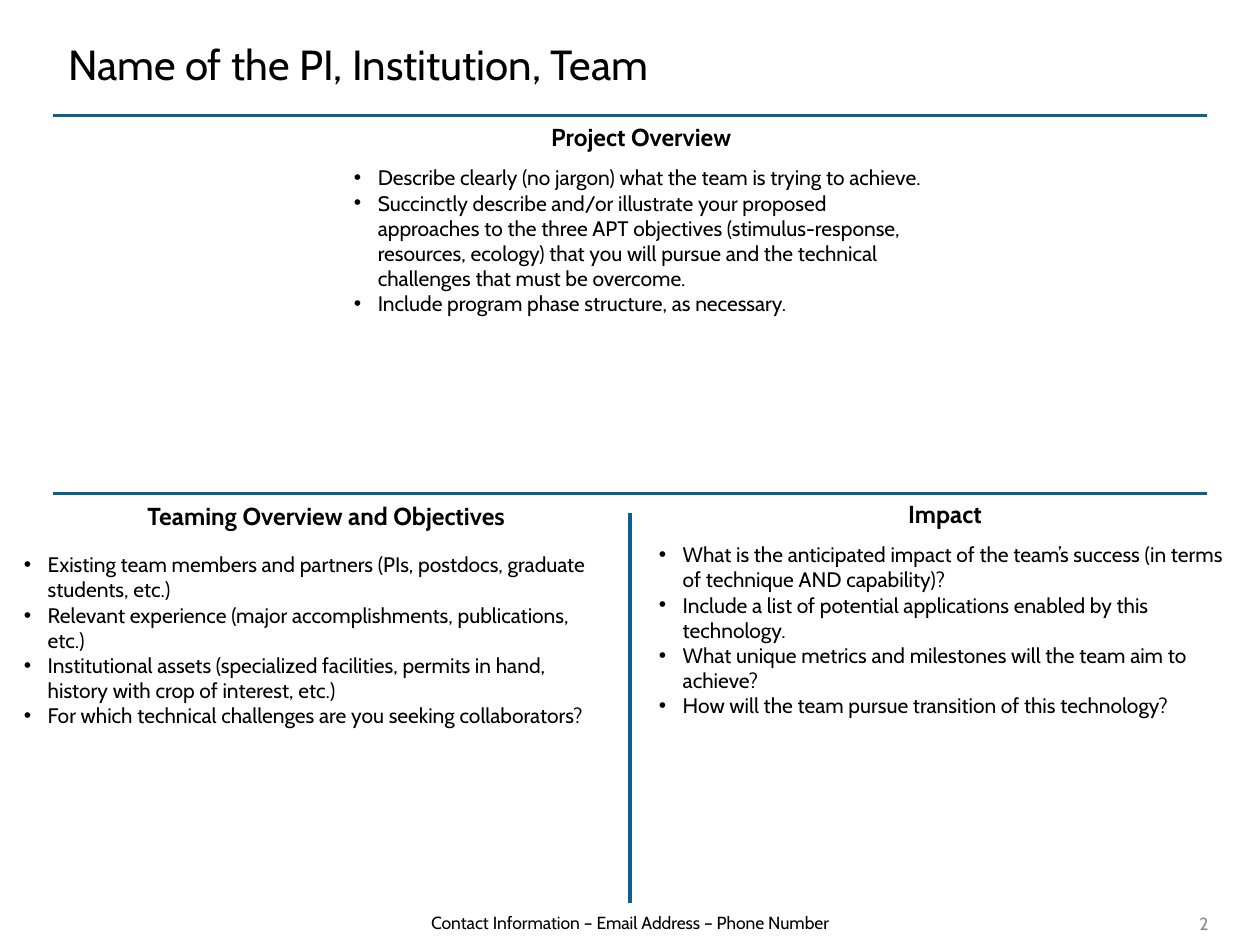
"""Build a project summary slide with an overview, teaming and impact panels."""
from dataclasses import dataclass

from lxml.etree import SubElement
from pptx import Presentation
from pptx.dml.color import RGBColor
from pptx.enum.shapes import MSO_CONNECTOR
from pptx.enum.text import MSO_ANCHOR, MSO_AUTO_SIZE, PP_ALIGN
from pptx.oxml.ns import qn
from pptx.slide import Slide
from pptx.text.text import TextFrame
from pptx.util import Inches, Pt

FONT = "Cabin"
BLACK, GRAY, BLUE = "000000", "898989", "0F5E90"
INDENT = Inches(0.19)


@dataclass
class Box:
    left: float
    top: float
    width: float
    height: float


@dataclass
class Style:
    size: int
    color: str = BLACK
    bold: bool = False
    align: PP_ALIGN = PP_ALIGN.LEFT
    anchor: MSO_ANCHOR = MSO_ANCHOR.TOP
    bullet: bool = False


@dataclass
class Panel:
    title: str
    head: Box
    body: Box
    items: list[str]


@dataclass
class Rule:
    left: float
    top: float
    right: float
    bottom: float


TITLE = Style(24, anchor=MSO_ANCHOR.MIDDLE)
HEAD = Style(14, bold=True, align=PP_ALIGN.CENTER)
BODY = Style(12, bullet=True)
FOOTER = Style(10, align=PP_ALIGN.CENTER, anchor=MSO_ANCHOR.MIDDLE)
NUMBER = Style(10, GRAY, align=PP_ALIGN.RIGHT, anchor=MSO_ANCHOR.MIDDLE)

RULES = [
    Rule(0.42, 0.92, 9.58, 0.92),
    Rule(0.42, 3.92, 9.58, 3.92),
    Rule(5, 4.07, 5, 7.17),
]

PANELS = [
    Panel("Project Overview", Box(2.59, 0.92, 5, 0.34), Box(2.71, 1.26, 4.75, 1.51), [
        "Describe clearly (no jargon) what the team is trying to achieve.",
        "Succinctly describe and/or illustrate your proposed approaches to the three "
        "APT objectives (stimulus-response, resources, ecology) that you will pursue "
        "and the technical challenges that must be overcome.",
        "Include program phase structure, as necessary.",
    ]),
    Panel("Teaming Overview and Objectives", Box(0.57, 3.93, 4.04, 0.34),
          Box(0.09, 4.33, 4.75, 1.72), [
        "Existing team members and partners (PIs, postdocs, graduate students, etc.)",
        "Relevant experience (major accomplishments, publications, etc.)",
        "Institutional assets (specialized facilities, permits in hand, history with "
        "crop of interest, etc.)",
        "For which technical challenges are you seeking collaborators?",
    ]),
    Panel("Impact", Box(5, 3.91, 5, 0.34), Box(5.13, 4.25, 4.75, 1.51), [
        "What is the anticipated impact of the team’s success (in terms of technique "
        "AND capability)?",
        "Include a list of potential applications enabled by this technology.",
        "What unique metrics and milestones will the team aim to achieve?",
        "How will the team pursue transition of this technology?",
    ]),
]


def rgb(code: str) -> RGBColor:
    return RGBColor.from_string(code)


def place(box: Box) -> tuple:
    return tuple(Inches(n) for n in (box.left, box.top, box.width, box.height))


def fill_text(frame: TextFrame, lines: list[str], style: Style) -> None:
    frame.word_wrap = True
    frame.auto_size = MSO_AUTO_SIZE.NONE
    frame.vertical_anchor = style.anchor
    frame.text = "\n".join(lines)
    for para in frame.paragraphs:
        para.alignment = style.align
        if style.bullet:
            props = para._p.get_or_add_pPr()
            props.set("marL", str(INDENT))
            props.set("indent", str(-INDENT))
            SubElement(props, qn("a:buFont"), typeface="Arial")
            SubElement(props, qn("a:buChar"), char="•")
        font = para.font
        font.name = FONT
        font.size = Pt(style.size)
        font.bold = style.bold
        font.color.rgb = rgb(style.color)


def add_text(slide: Slide, box: Box, lines: list[str], style: Style) -> None:
    fill_text(slide.shapes.add_textbox(*place(box)).text_frame, lines, style)


def add_rule(slide: Slide, rule: Rule) -> None:
    ends = (Inches(n) for n in (rule.left, rule.top, rule.right, rule.bottom))
    line = slide.shapes.add_connector(MSO_CONNECTOR.STRAIGHT, *ends)
    line.line.color.rgb = rgb(BLUE)
    line.line.width = Pt(1.75)
    SubElement(line._element.spPr, qn("a:effectLst"))


def add_panel(slide: Slide, panel: Panel) -> None:
    add_text(slide, panel.head, [panel.title], HEAD)
    add_text(slide, panel.body, panel.items, BODY)


def main() -> None:
    deck = Presentation()
    deck.slide_width, deck.slide_height = Inches(10), Inches(7.5)
    slide = deck.slides.add_slide(deck.slide_layouts[5])
    title = slide.shapes.title
    title.left, title.top, title.width, title.height = place(Box(0.44, 0.17, 7.81, 0.67))
    fill_text(title.text_frame, ["Name of the PI, Institution, Team"], TITLE)
    for rule in RULES:
        add_rule(slide, rule)
    for panel in PANELS:
        add_panel(slide, panel)
    add_text(slide, Box(1.46, 7.16, 7.08, 0.33),
             ["Contact Information – Email Address – Phone Number"], FOOTER)
    add_text(slide, Box(8.86, 7.17, 0.83, 0.32), ["2"], NUMBER)
    deck.save("out.pptx")


if __name__ == "__main__":
    main()
